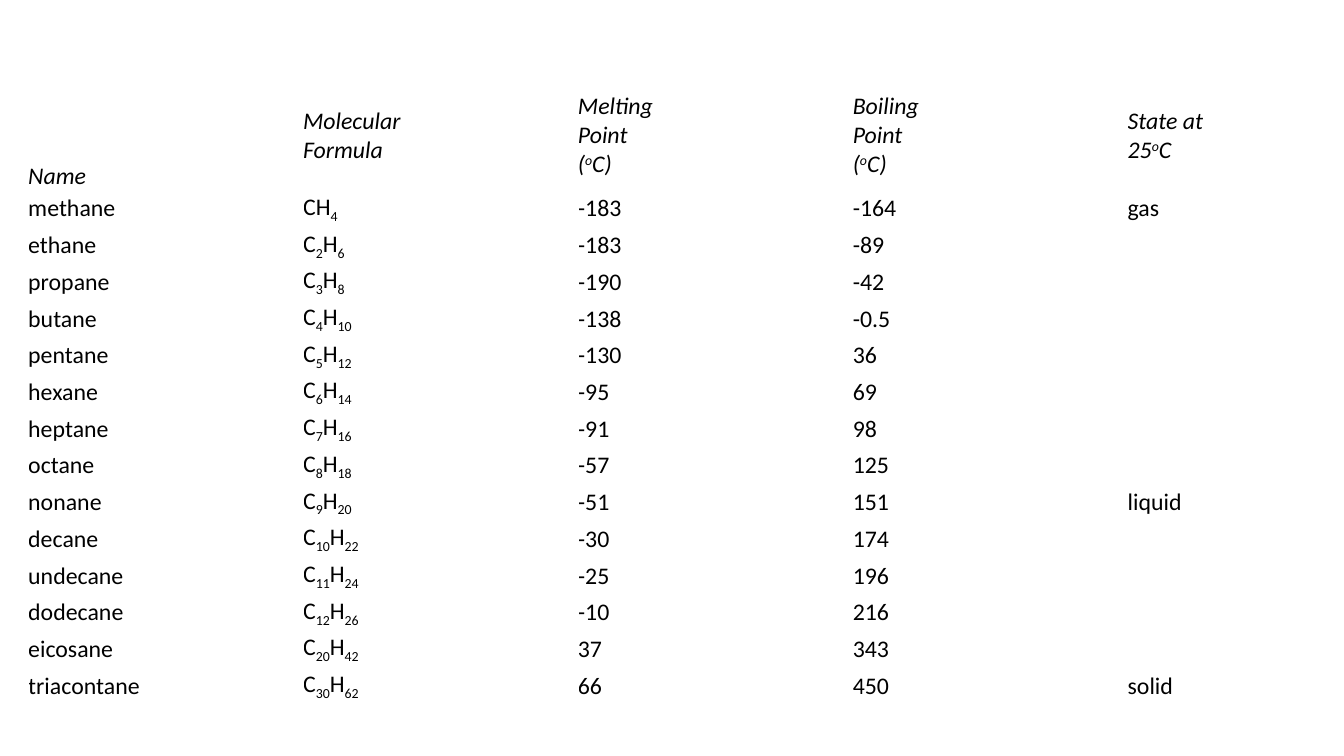
import pptx
import pptx.util
import pptx.dml.color
import pptx.enum.text

Inches = pptx.util.Inches
ANCHOR = pptx.enum.text.MSO_ANCHOR
COLORS = {"text": "000000"}
SUPER, SUB = 30000, -25000

HEADS = [
    "Name",
    "Molecular\nFormula",
    "Melting\nPoint \n(|o|C)",
    "Boiling\nPoint \n(|o|C)",
    "State at\n25|o|C",
]
ALKANES = [
    ("methane", 1, "-183", "-164", "gas"),
    ("ethane", 2, "-183", "-89", ""),
    ("propane", 3, "-190", "-42", ""),
    ("butane", 4, "-138", "-0.5", ""),
    ("pentane", 5, "-130", "36", ""),
    ("hexane", 6, "-95", "69", ""),
    ("heptane", 7, "-91", "98", ""),
    ("octane", 8, "-57", "125", ""),
    ("nonane", 9, "-51", "151", "liquid"),
    ("decane", 10, "-30", "174", ""),
    ("undecane", 11, "-25", "196", ""),
    ("dodecane", 12, "-10", "216", ""),
    ("eicosane", 20, "37", "343", ""),
    ("triacontane", 30, "66", "450", "solid"),
]


def formula(carbons):
    count = f"|{carbons}|" if carbons > 1 else ""
    return f"C{count}H|{2 * carbons + 2}|"


def add_runs(para, text, shift):
    for index, part in enumerate(text.split("|")):
        for number, line in enumerate(part.split("\n")):
            if number:
                para.add_line_break()
            if line:
                run = para.add_run()
                run.text = line
                if index % 2:
                    run._r.get_or_add_rPr().set("baseline", str(shift))


def style_cell(cell):
    cell.fill.background()
    cell.margin_left = cell.margin_right = Inches(0)
    cell.margin_top = cell.margin_bottom = Inches(0)
    cell.vertical_anchor = ANCHOR.MIDDLE


def fill_cell(cell, text, shift, italic=False):
    para = cell.text_frame.paragraphs[0]
    font = para.font
    font.name = "Calibri"
    font.size = pptx.util.Pt(17)
    font.bold = False
    font.italic = italic
    font.color.rgb = pptx.dml.color.RGBColor.from_string(COLORS["text"])
    add_runs(para, text, shift)


def add_grid(slide):
    rows, cols = len(ALKANES) + 1, 2 * len(HEADS) - 1
    width, height, top = 12.27, 6.19, 1.09
    frame = slide.shapes.add_table(
        rows, cols, Inches(0.28), Inches(0.8), Inches(width), Inches(height)
    )
    table = frame.table
    table.first_row = table.horz_banding = False
    for col in table.columns:
        col.width = Inches(width / cols)
    for row in table.rows:
        row.height = Inches((height - top) / len(ALKANES))
    table.rows[0].height = Inches(top)
    for cell in table.iter_cells():
        style_cell(cell)
    return table


def main():
    deck = pptx.Presentation()
    deck.slide_width, deck.slide_height = Inches(13.33), Inches(7.5)
    slide = deck.slides.add_slide(deck.slide_layouts[6])
    table = add_grid(slide)
    for col, head in enumerate(HEADS):
        fill_cell(table.cell(0, 2 * col), head, SUPER, italic=True)
    table.cell(0, 0).vertical_anchor = ANCHOR.BOTTOM
    for row, (name, carbons, melt, boil, state) in enumerate(ALKANES, 1):
        for col, text in enumerate((name, formula(carbons), melt, boil, state)):
            fill_cell(table.cell(row, 2 * col), text, SUB)
    deck.save("out.pptx")


if __name__ == "__main__":
    main()
